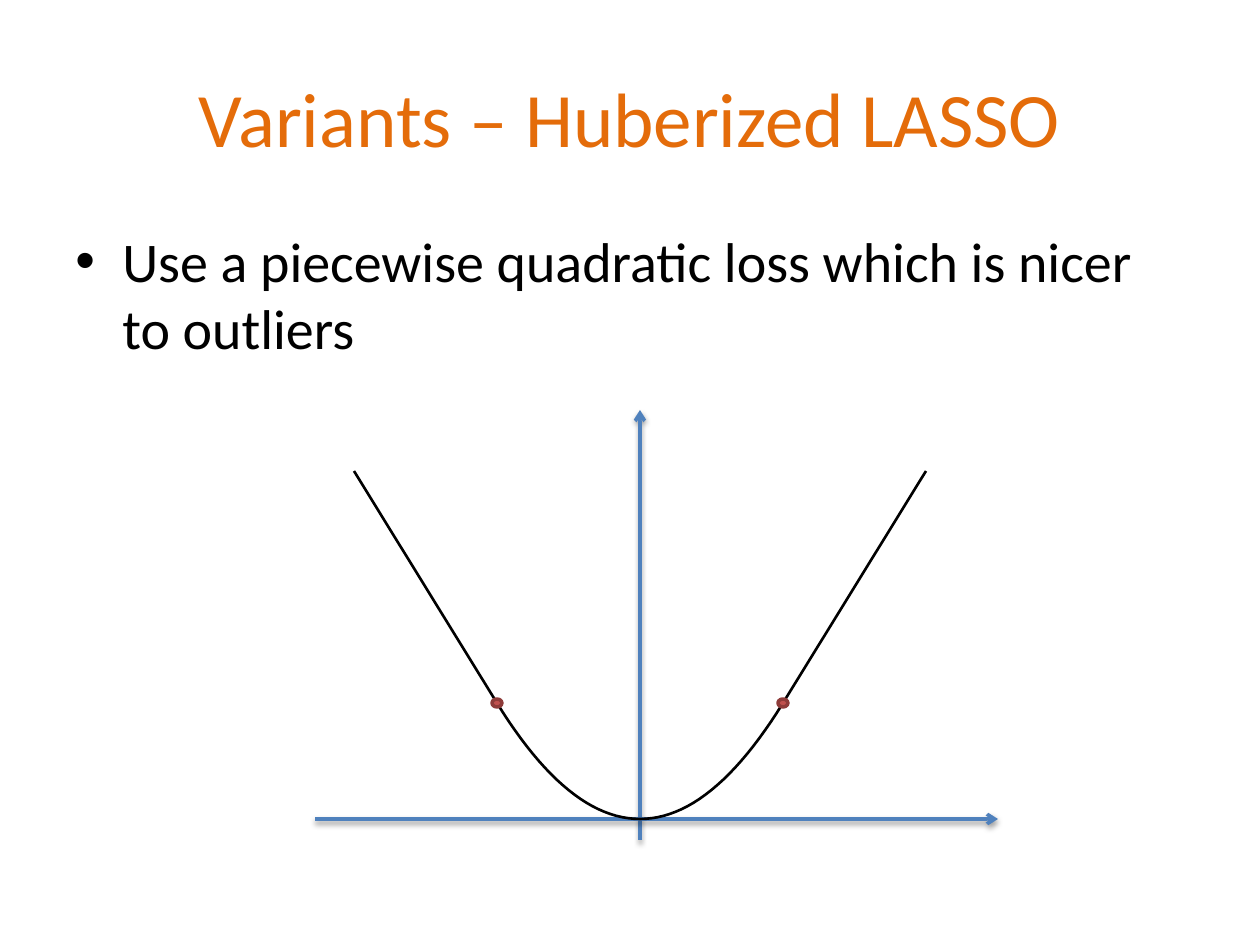
import lxml.etree
import pptx
import pptx.dml.color
import pptx.enum.shapes
import pptx.enum.text
import pptx.oxml
import pptx.oxml.ns
import pptx.util

EMU_PER_PX = 914400 / 126
FONT = "Calibri"
COLORS = {
    "title": "E46C0A",
    "text": "000000",
    "axis": "4F81BD",
    "knot": "C0504D",
    "knot_edge": "8E3B39",
    "shadow": "000000",
}


def px(length):
    """Turn a length in px into EMU."""
    return pptx.util.Emu(round(length * EMU_PER_PX))


def color(name):
    """Look up a named colour."""
    return pptx.dml.color.RGBColor.from_string(COLORS[name])


def add_xml(parent, tag, **attributes):
    """Append a DrawingML element to a parent."""
    child = lxml.etree.SubElement(parent, pptx.oxml.ns.qn(tag))
    for key, value in attributes.items():
        child.set(key, str(value))
    return child


def set_line(shape, name, width):
    """Give a shape a solid outline."""
    shape.line.color.rgb = color(name)
    shape.line.width = pptx.util.Pt(width)


def add_text(page, box, text, size, ink, align="LEFT", anchor="TOP", bullet=None, indent=0):
    """Write one paragraph in a wrapped text box."""
    frame = page.shapes.add_textbox(*map(px, box)).text_frame
    frame.word_wrap = True
    frame.vertical_anchor = pptx.enum.text.MSO_ANCHOR[anchor]
    para = frame.paragraphs[0]
    para.alignment = pptx.enum.text.PP_ALIGN[align]
    span = para.add_run()
    span.text = text
    span.font.name = FONT
    span.font.size = pptx.util.Pt(size)
    span.font.color.rgb = color(ink)
    if bullet:
        para.space_before = pptx.util.Pt(size * 0.2)
        properties = para._p.get_or_add_pPr()
        properties.set("marL", str(px(indent)))
        properties.set("indent", str(-px(indent)))
        add_xml(properties, "a:buFont", typeface="Arial")
        add_xml(properties, "a:buChar", char=bullet)


def add_axis(page, start, end):
    """Draw an axis arrow with a soft shadow below it."""
    axis = page.shapes.add_connector(
        pptx.enum.shapes.MSO_CONNECTOR.STRAIGHT, *map(px, (*start, *end))
    )
    set_line(axis, "axis", 2)
    add_xml(axis.line._ln, "a:tailEnd", type="arrow")
    effects = add_xml(axis._element.spPr, "a:effectLst")
    shadow = add_xml(
        effects, "a:outerShdw", blurRad=40000, dist=20000, dir=5400000, rotWithShape=0
    )
    shade = add_xml(shadow, "a:srgbClr", val=COLORS["shadow"])
    add_xml(shade, "a:alpha", val=38000)


def huber(distance):
    """Return the loss: quadratic up to 1, linear beyond."""
    return distance**2 if abs(distance) <= 1 else 2 * abs(distance) - 1


def add_curve(page, locate, steps=48):
    """Draw the loss from -2 to 2 as an open outline."""
    points = [
        tuple(map(px, locate(2 * step / steps))) for step in range(-steps, steps + 1)
    ]
    builder = page.shapes.build_freeform(*points[0])
    builder.add_line_segments(points[1:], close=False)
    curve = builder.convert_to_shape()
    curve.shadow.inherit = False
    curve.fill.background()
    set_line(curve, "text", 1.5)


def add_knot(page, center, width=10, height=8):
    """Mark a point where the loss turns linear."""
    x, y = center
    knot = page.shapes.add_shape(
        pptx.enum.shapes.MSO_SHAPE.OVAL,
        *map(px, (x - width / 2, y - height / 2, width, height)),
    )
    knot.shadow.inherit = False
    knot.fill.solid()
    knot.fill.fore_color.rgb = color("knot")
    set_line(knot, "knot_edge", 2)


def add_loss_plot(page, box):
    """Draw the axes, the Huber loss and its two knots."""
    left, top, width, height = box
    center, base = left + 325, top + height - 21
    unit_x, unit_y = 143, 116

    def locate(distance):
        """Place a point of the loss on the page."""
        return center + distance * unit_x, base - huber(distance) * unit_y

    add_axis(page, (center, top + height), (center, top))
    add_axis(page, (left, base), (left + width, base))
    add_curve(page, locate)
    for side in (-1, 1):
        add_knot(page, locate(side))


def main():
    """Build the slide and save the deck."""
    deck = pptx.Presentation()
    deck.slide_width, deck.slide_height = px(1260), px(945)
    page = deck.slides.add_slide(deck.slide_layouts[6])
    add_text(
        page, (63, 38, 1134, 157), "Variants – Huberized LASSO", 44, "title",
        align="CENTER", anchor="MIDDLE",
    )
    add_text(
        page, (63, 220, 1134, 624),
        "Use a piecewise quadratic loss which is nicer to outliers", 32, "text",
        bullet="•", indent=47,
    )
    add_loss_plot(page, (315, 410, 683, 430))
    deck.save("out.pptx")


if __name__ == "__main__":
    main()
